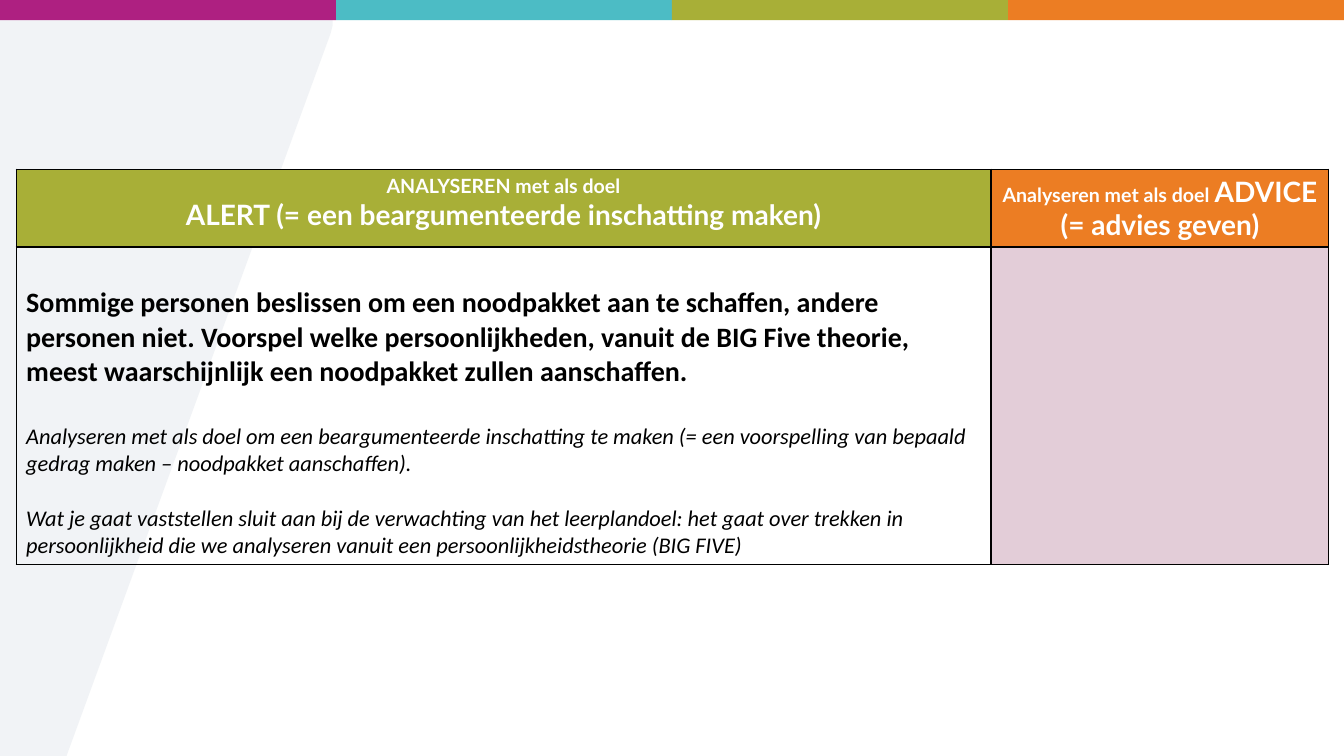
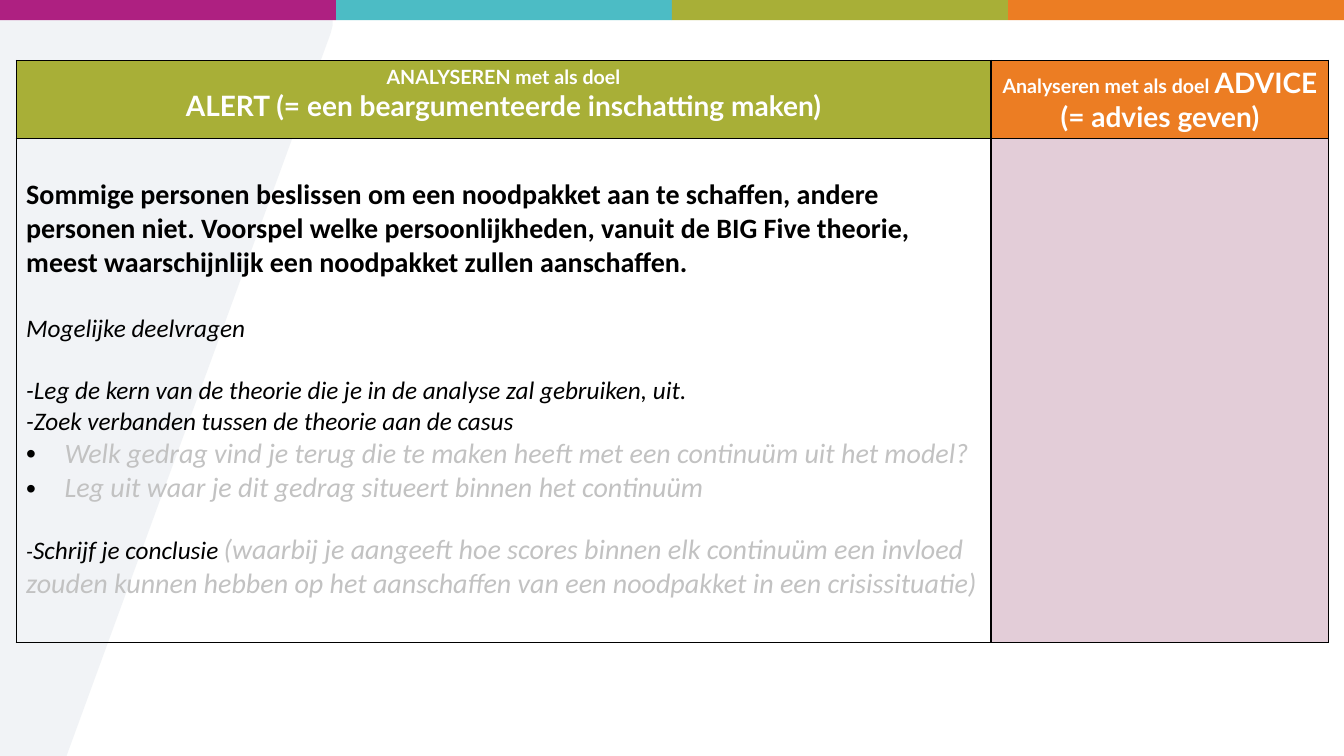
"""Build two slides on analysing a case, with one shared frame and table design."""

from dataclasses import dataclass

import lxml.etree
import pptx
import pptx.dml.color
import pptx.enum.shapes
import pptx.enum.text
import pptx.oxml.ns
import pptx.presentation
import pptx.slide
import pptx.table
import pptx.text.text
import pptx.util

Inches = pptx.util.Inches
Pt = pptx.util.Pt
RGBColor = pptx.dml.color.RGBColor
qn = pptx.oxml.ns.qn

MAGENTA = RGBColor(0xAE, 0x20, 0x81)
TEAL = RGBColor(0x4C, 0xBC, 0xC5)
OLIVE = RGBColor(0xA8, 0xAF, 0x37)
ORANGE = RGBColor(0xEC, 0x7D, 0x23)
PINK = RGBColor(0xE3, 0xCD, 0xD8)
MIST = RGBColor(0xE8, 0xEC, 0xF0)
GREY = RGBColor(0xC2, 0xC2, 0xC2)
BLACK = RGBColor(0, 0, 0)
WHITE = RGBColor(0xFF, 0xFF, 0xFF)

SLIDE_WIDTH = Inches(13.33)
SLIDE_HEIGHT = Inches(7.5)
BAND_COLORS = (MAGENTA, TEAL, OLIVE, ORANGE)
BAND_HEIGHT = Inches(0.2)
PANEL_POINTS = ((0, 0.05), (3.3, 0.05), (3.3, 0.25), (3.28, 0.33), (0.66, 7.5), (0, 7.5))
TABLE_LEFT = Inches(0.16)
COLUMN_WIDTHS = (Inches(9.67), Inches(3.35))
HEADER_HEIGHT = Inches(0.77)
BODY_TOP_MARGIN = Inches(0.39)
BULLET_INDENT = Inches(0.38)


@dataclass(frozen=True)
class TextRun:
    """A piece of text with one style."""

    text: str
    size: int
    color: RGBColor = BLACK
    bold: bool = False
    italic: bool = True
    font: str = "Calibri"
    break_after: bool = False


@dataclass(frozen=True)
class TextParagraph:
    """A paragraph of styled runs."""

    runs: tuple[TextRun, ...]
    space_before: float = 0
    bullet: bool = False
    centered: bool = False


@dataclass(frozen=True)
class TableSlide:
    """The table of one slide."""

    top: float
    body_height: float
    body: tuple[TextParagraph, ...]


def header_run(text: str, size: int, break_after: bool = False) -> TextRun:
    """Return a white bold heading run."""
    return TextRun(text, size, WHITE, True, False, "Lato", break_after)


ALERT_HEADER = TextParagraph(
    (
        header_run("ANALYSEREN met als doel", 14, break_after=True),
        header_run("ALERT (= een beargumenteerde inschatting maken)", 20),
    ),
    centered=True,
)
ADVICE_HEADER = TextParagraph(
    (header_run("Analyseren met als doel ", 14), header_run("ADVICE (= advies geven)", 20)),
    centered=True,
)
QUESTION = TextParagraph(
    (
        TextRun(
            "Sommige personen beslissen om een noodpakket aan te schaffen, andere personen niet. "
            "Voorspel welke persoonlijkheden, vanuit de BIG Five theorie, meest waarschijnlijk "
            "een noodpakket zullen aanschaffen.",
            20,
            bold=True,
            italic=False,
        ),
    )
)

TABLE_SLIDES = (
    TableSlide(
        1.68,
        3.15,
        (
            QUESTION,
            TextParagraph(
                (
                    TextRun(
                        "Analyseren met als doel om een beargumenteerde inschatting te maken "
                        "(= een voorspelling van bepaald gedrag maken – noodpakket aanschaffen).",
                        16,
                    ),
                ),
                space_before=24,
            ),
            TextParagraph(
                (
                    TextRun(
                        "Wat je gaat vaststellen sluit aan bij de verwachting van het leerplandoel: "
                        "het gaat over trekken in persoonlijkheid die we analyseren vanuit een "
                        "persoonlijkheidstheorie (BIG FIVE)",
                        16,
                    ),
                ),
                space_before=19.5,
            ),
        ),
    ),
    TableSlide(
        0.6,
        5,
        (
            QUESTION,
            TextParagraph((TextRun("Mogelijke deelvragen", 18),), space_before=24),
            TextParagraph(
                (TextRun("-Leg de kern van de theorie die je in de analyse zal gebruiken, uit.", 18),),
                space_before=22,
            ),
            TextParagraph((TextRun("-Zoek verbanden tussen de theorie aan de casus", 18),)),
            TextParagraph(
                (
                    TextRun(
                        "Welk gedrag vind je terug die te maken heeft met een continuüm uit het model?",
                        20,
                        GREY,
                    ),
                ),
                bullet=True,
            ),
            TextParagraph(
                (TextRun("Leg uit waar je dit gedrag situeert binnen het continuüm", 20, GREY),),
                bullet=True,
            ),
            TextParagraph(
                (
                    TextRun("-", 16),
                    TextRun("Schrijf je conclusie", 18),
                    TextRun(" ", 16),
                    TextRun(
                        "(waarbij je aangeeft hoe scores binnen elk continuüm een invloed zouden "
                        "kunnen hebben op het aanschaffen van een noodpakket in een crisissituatie)",
                        20,
                        GREY,
                    ),
                ),
                space_before=19.5,
            ),
        ),
    ),
)


def add_solid_fill(parent: lxml.etree._Element, tag: str, color: RGBColor) -> None:
    """Append a colour element such as a:solidFill or a:buClr."""
    holder = lxml.etree.SubElement(parent, qn(tag))
    lxml.etree.SubElement(holder, qn("a:srgbClr"), val=str(color))


def add_frame(slide: pptx.slide.Slide) -> None:
    """Draw the slanted side panel and the coloured top band."""
    builder = slide.shapes.build_freeform(0, Inches(0.05), scale=1.0)
    points = [(Inches(x), Inches(y)) for x, y in PANEL_POINTS]
    builder.add_line_segments(points[1:], close=True)
    panel = builder.convert_to_shape()
    panel.shadow.inherit = False
    panel.fill.solid()
    panel.fill.fore_color.rgb = MIST
    panel.line.fill.background()
    color_element = panel.fill._xPr.find(qn("a:solidFill")).find(qn("a:srgbClr"))
    lxml.etree.SubElement(color_element, qn("a:alpha"), val="59000")

    band_width = SLIDE_WIDTH // len(BAND_COLORS)
    for index, color in enumerate(BAND_COLORS):
        band = slide.shapes.add_shape(
            pptx.enum.shapes.MSO_SHAPE.RECTANGLE, index * band_width, 0, band_width, BAND_HEIGHT
        )
        band.shadow.inherit = False
        band.fill.solid()
        band.fill.fore_color.rgb = color
        band.line.fill.background()


def style_cell(cell: pptx.table._Cell, color: RGBColor | None) -> None:
    """Give a cell black borders and an optional fill."""
    properties = cell._tc.get_or_add_tcPr()
    for side in ("a:lnL", "a:lnR", "a:lnT", "a:lnB"):
        border = lxml.etree.SubElement(properties, qn(side), w=str(Pt(1)))
        add_solid_fill(border, "a:solidFill", BLACK)
    if color is None:
        cell.fill.background()
    else:
        cell.fill.solid()
        cell.fill.fore_color.rgb = color


def add_bullet(paragraph: pptx.text.text._Paragraph) -> None:
    """Give a paragraph a black bullet with a hanging indent."""
    properties = paragraph._p.get_or_add_pPr()
    properties.set("marL", str(BULLET_INDENT))
    properties.set("indent", str(-BULLET_INDENT))
    add_solid_fill(properties, "a:buClr", BLACK)
    lxml.etree.SubElement(properties, qn("a:buFont"), typeface="Arial")
    lxml.etree.SubElement(properties, qn("a:buChar"), char="•")


def write_paragraphs(cell: pptx.table._Cell, contents: tuple[TextParagraph, ...]) -> None:
    """Write paragraphs into a cell, run by run."""
    frame = cell.text_frame
    for index, content in enumerate(contents):
        paragraph = frame.add_paragraph() if index else frame.paragraphs[0]
        if content.bullet:
            add_bullet(paragraph)
        if content.centered:
            paragraph.alignment = pptx.enum.text.PP_ALIGN.CENTER
        if content.space_before:
            paragraph.space_before = Pt(content.space_before)
        for text_run in content.runs:
            run = paragraph.add_run()
            run.text = text_run.text
            run.font.name = text_run.font
            run.font.size = Pt(text_run.size)
            run.font.bold = text_run.bold
            run.font.italic = text_run.italic
            run.font.color.rgb = text_run.color
            if text_run.break_after:
                paragraph.add_line_break()


def add_goal_table(slide: pptx.slide.Slide, content: TableSlide) -> None:
    """Draw the table with the two goals."""
    body_height = Inches(content.body_height)
    table = slide.shapes.add_table(
        2, 2, TABLE_LEFT, Inches(content.top), sum(COLUMN_WIDTHS), HEADER_HEIGHT + body_height
    ).table
    table.first_row = False
    table.horz_banding = False
    for column, width in zip(table.columns, COLUMN_WIDTHS):
        column.width = width
    table.rows[0].height = HEADER_HEIGHT
    table.rows[1].height = body_height
    for cell, color in zip(table.iter_cells(), (OLIVE, ORANGE, None, PINK)):
        style_cell(cell, color)
    table.cell(1, 0).margin_top = BODY_TOP_MARGIN
    write_paragraphs(table.cell(0, 0), (ALERT_HEADER,))
    write_paragraphs(table.cell(0, 1), (ADVICE_HEADER,))
    write_paragraphs(table.cell(1, 0), content.body)


def main() -> None:
    """Build and save the presentation."""
    presentation = pptx.Presentation()
    presentation.slide_width = SLIDE_WIDTH
    presentation.slide_height = SLIDE_HEIGHT
    for content in TABLE_SLIDES:
        slide = presentation.slides.add_slide(presentation.slide_layouts[6])
        add_frame(slide)
        add_goal_table(slide, content)
    presentation.save("out.pptx")


if __name__ == "__main__":
    main()
